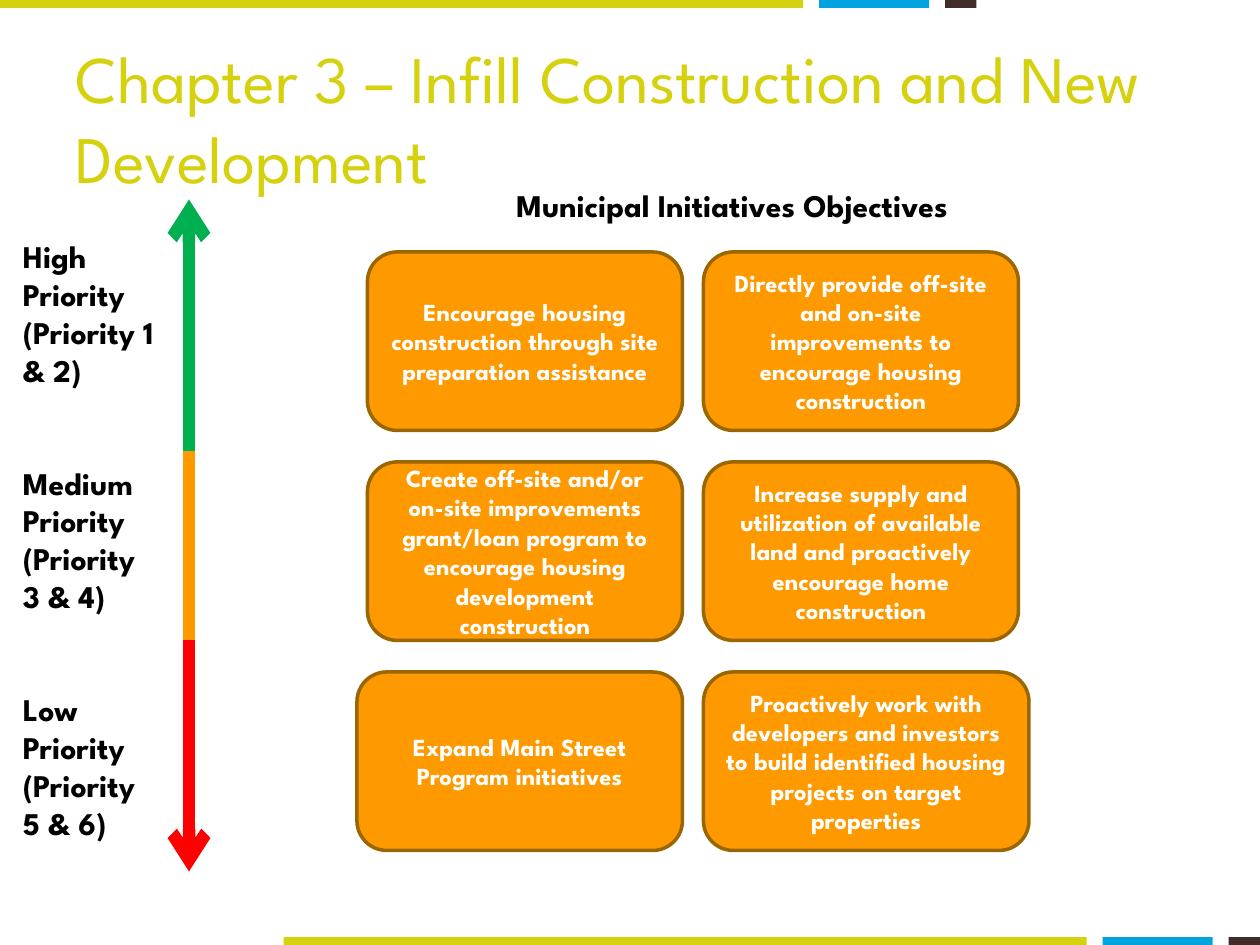
from dataclasses import dataclass

import pptx
import pptx.dml.color
import pptx.enum.shapes
import pptx.enum.text
import pptx.oxml.ns
import pptx.util
from lxml import etree

Pt = pptx.util.Pt
Align = pptx.enum.text.PP_ALIGN
Anchor = pptx.enum.text.MSO_ANCHOR
Shape = pptx.enum.shapes.MSO_SHAPE


@dataclass(frozen=True)
class Theme:
    font: str = "League Spartan"
    lime: str = "D5D10E"
    blue: str = "00A3DD"
    brown: str = "422D2D"
    black: str = "000000"
    white: str = "FFFFFF"
    green: str = "00B050"
    orange: str = "FF9900"
    red: str = "FF0000"
    card_border: str = "996600"
    title_size: float = 38
    label_size: float = 18
    card_size: float = 14


THEME = Theme()

PRIORITIES = [
    "High Priority (Priority 1 & 2)",
    "Medium Priority (Priority 3 & 4)",
    "Low Priority (Priority 5 & 6)",
]

# Each row: left edge of the first card, card width, card texts
CARD_ROWS = [
    (210, 180, [
        "Encourage housing construction through site preparation assistance",
        "Directly provide off-site and on-site improvements to encourage housing construction",
    ]),
    (210, 180, [
        "Create off-site and/or on-site improvements grant/loan program to encourage "
        "housing development construction",
        "Increase supply and utilization of available land and proactively encourage "
        "home construction",
    ]),
    (204, 186, [
        "Expand Main Street Program initiatives",
        "Proactively work with developers and investors to build identified housing "
        "projects on target properties",
    ]),
]


def rgb(value):
    return pptx.dml.color.RGBColor.from_string(value)


def write_text(shape, *texts, size, color, bold=True, align=Align.LEFT,
               anchor=Anchor.TOP, gap=0):
    """Write one paragraph per text, with a gap in points between them."""
    frame = shape.text_frame
    frame.word_wrap = True
    frame.vertical_anchor = anchor
    for index, text in enumerate(texts):
        paragraph = frame.add_paragraph() if index else frame.paragraphs[0]
        paragraph.alignment = align
        paragraph.space_before = Pt(gap if index else 0)
        run = paragraph.add_run()
        run.text = text
        run.font.name = THEME.font
        run.font.size = Pt(size)
        run.font.bold = bold
        run.font.color.rgb = rgb(color)


def add_text(slide, left, top, width, height, *texts, **text_format):
    shape = slide.shapes.add_textbox(Pt(left), Pt(top), Pt(width), Pt(height))
    write_text(shape, *texts, **text_format)


def add_box(slide, kind, left, top, width, height, fill, border=None):
    shape = slide.shapes.add_shape(kind, Pt(left), Pt(top), Pt(width), Pt(height))
    shape.shadow.inherit = False
    shape.fill.solid()
    shape.fill.fore_color.rgb = rgb(fill)
    if border:
        shape.line.color.rgb = rgb(border)
        shape.line.width = Pt(2)
    else:
        shape.line.fill.background()
    return shape


def add_stripe(slide, left, top):
    bars = [(0, 459, THEME.lime), (468, 63, THEME.blue), (540, 18, THEME.brown)]
    for offset, width, color in bars:
        add_box(slide, Shape.RECTANGLE, left + offset, top, width, 4.5, color)


def add_scale_segment(slide, x, start, end, color, arrow=False):
    connector = slide.shapes.add_connector(
        pptx.enum.shapes.MSO_CONNECTOR.STRAIGHT, Pt(x), Pt(start), Pt(x), Pt(end))
    connector.line.color.rgb = rgb(color)
    connector.line.width = Pt(7)
    if arrow:
        line = connector.line._get_or_add_ln()
        etree.SubElement(line, pptx.oxml.ns.qn("a:tailEnd"), type="arrow")
    etree.SubElement(connector._element.spPr, pptx.oxml.ns.qn("a:effectLst"))


def add_cards(slide):
    for row, (first_left, width, texts) in enumerate(CARD_ROWS):
        for left, text in zip((first_left, 402), texts):
            card = add_box(slide, Shape.ROUNDED_RECTANGLE, left, 144 + 120 * row,
                           width, 102, THEME.orange, THEME.card_border)
            write_text(card, text, size=THEME.card_size, color=THEME.white,
                       align=Align.CENTER, anchor=Anchor.MIDDLE)


def main():
    presentation = pptx.Presentation()
    presentation.slide_width, presentation.slide_height = Pt(720), Pt(540)
    slide = presentation.slides.add_slide(presentation.slide_layouts[6])

    # Stripes along the bottom and top edges
    add_stripe(slide, 162, 535.5)
    add_stripe(slide, 0, 0)

    # Title
    add_text(slide, 36, 21.6, 648, 90,
             "Chapter 3 – Infill Construction and New Development",
             size=THEME.title_size, color=THEME.lime, bold=False, anchor=Anchor.MIDDLE)

    # Priority scale and its labels
    add_scale_segment(slide, 108, 258, 114, THEME.green, arrow=True)
    add_scale_segment(slide, 108, 258, 366, THEME.orange)
    add_scale_segment(slide, 108, 366, 498, THEME.red, arrow=True)
    add_text(slide, 6, 132, 90, 356, *PRIORITIES,
             size=THEME.label_size, color=THEME.black, gap=43)

    # Objectives
    add_text(slide, 288, 103, 288, 29, "Municipal Initiatives Objectives",
             size=THEME.label_size, color=THEME.black)
    add_cards(slide)

    presentation.save("out.pptx")


if __name__ == "__main__":
    main()
